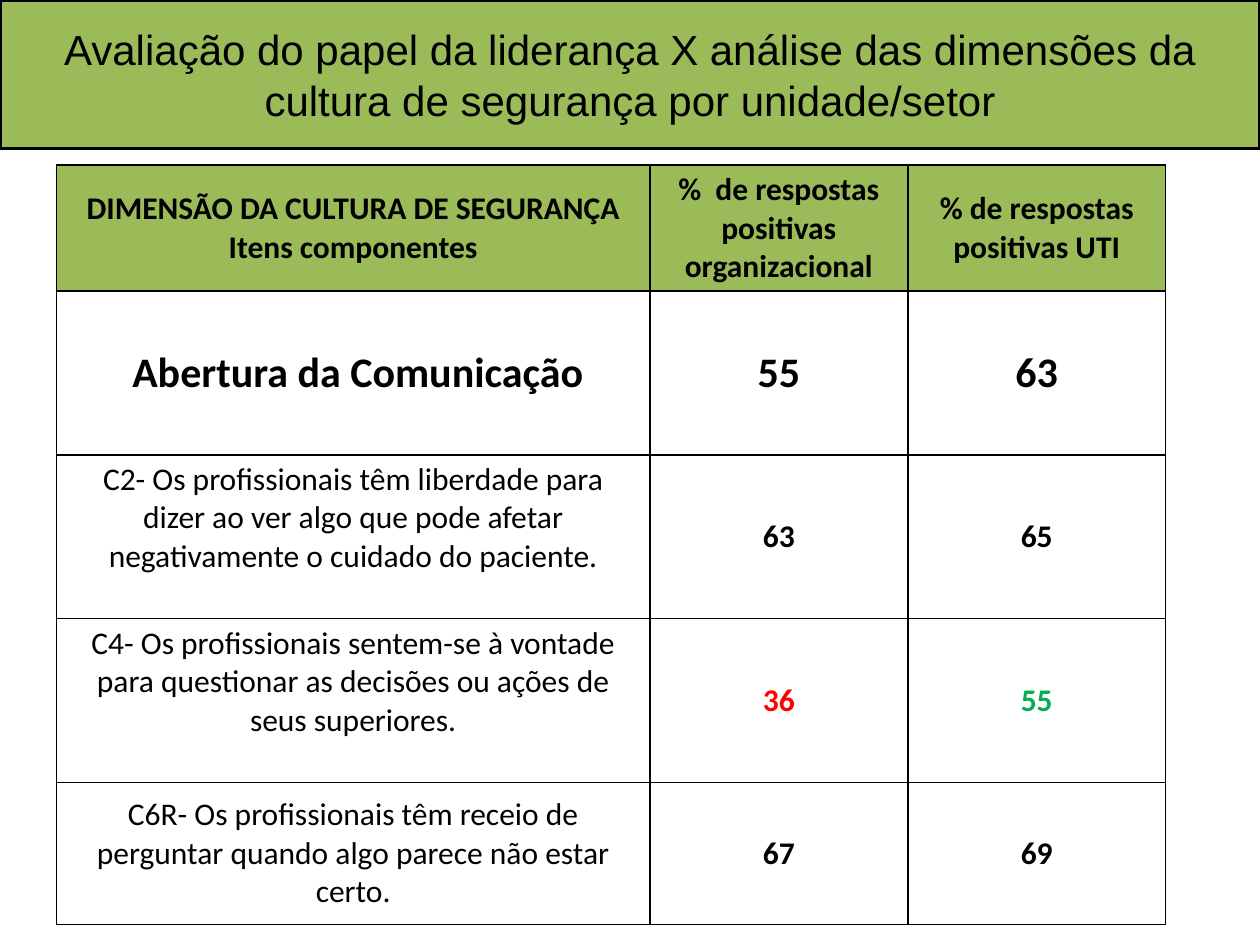
from dataclasses import dataclass

from lxml.etree import SubElement
from pptx import Presentation
from pptx.dml.color import RGBColor as Color
from pptx.enum.shapes import MSO_SHAPE as Shape
from pptx.enum.text import MSO_ANCHOR as Anchor, PP_ALIGN as Align
from pptx.oxml.ns import qn
from pptx.util import Cm, Pt

# Content
TITLE = ("Avaliação do papel da liderança X análise das dimensões da "
         "cultura de segurança por unidade/setor")
HEADERS = [
    ["DIMENSÃO DA CULTURA DE SEGURANÇA", "Itens componentes"],
    ["%  de respostas positivas organizacional"],
    ["% de respostas positivas UTI"],
]
DIMENSION = (" Abertura da Comunicação", 55, 63)
ITEMS = [
    ("C2- Os profissionais têm liberdade para dizer ao ver algo que pode "
     "afetar negativamente o cuidado do paciente.", 63, 65),
    ("C4- Os profissionais sentem-se à vontade para questionar as decisões "
     "ou ações de seus superiores.", 36, 55),
    ("C6R- Os profissionais têm receio de perguntar quando algo parece não "
     "estar certo.", 67, 69),
]


@dataclass(frozen=True)
class Theme:
    green: Color = Color(0x9B, 0xBB, 0x59)
    black: Color = Color(0, 0, 0)
    low: Color = Color(0xFF, 0, 0)
    improved: Color = Color(0, 0xB0, 0x50)
    title_font: str = "Arial"
    table_font: str = "Calibri"
    large: int = 24
    body: int = 18


THEME = Theme()
HIGHLIGHTS = {(3, 1): THEME.low, (3, 2): THEME.improved}

# Layout in centimetres
SLIDE_SIZE = (25.4, 19.05)
TITLE_HEIGHT = 3
TABLE_LEFT, TABLE_TOP = 1.14, 3.33
COLUMN_WIDTHS = [11.96, 5.2, 5.2]
ROW_HEIGHTS = [2.54, 3.3, 3.3, 3.3, 2.87]
SIDE_MARGIN, EDGE_MARGIN = 0.25, 0.1
RAISED_MARGIN = 0.85  # lifts the text of the two tall item rows
RAISED_CELLS = {(2, 0), (3, 0)}


def write(frame, lines, font, size, bold=False, color=THEME.black):
    frame.word_wrap = True
    for index, line in enumerate(lines):
        paragraph = frame.paragraphs[0] if index == 0 else frame.add_paragraph()
        paragraph.alignment = Align.CENTER
        run = paragraph.add_run()
        run.text = line
        run.font.name = font
        run.font.size = Pt(size)
        run.font.bold = bold
        run.font.color.rgb = color


def add_borders(cell):
    properties = cell._tc.get_or_add_tcPr()
    for index, side in enumerate(("lnL", "lnR", "lnT", "lnB")):
        line = SubElement(properties, qn(f"a:{side}"), w=str(Pt(1)))
        fill = SubElement(line, qn("a:solidFill"))
        SubElement(fill, qn("a:srgbClr"), val=str(THEME.black))
        properties.remove(line)
        properties.insert(index, line)  # borders come before the fill


def add_title(slide):
    banner = slide.shapes.add_shape(
        Shape.RECTANGLE, 0, 0, Cm(SLIDE_SIZE[0]), Cm(TITLE_HEIGHT))
    banner.shadow.inherit = False
    banner.fill.solid()
    banner.fill.fore_color.rgb = THEME.green
    banner.line.color.rgb = THEME.black
    banner.line.width = Pt(2)
    banner.text_frame.vertical_anchor = Anchor.MIDDLE
    write(banner.text_frame, [TITLE], THEME.title_font, THEME.large)


def add_results(slide):
    rows = [HEADERS] + [[[str(value)] for value in row]
                        for row in (DIMENSION, *ITEMS)]
    table = slide.shapes.add_table(
        len(rows), len(HEADERS), Cm(TABLE_LEFT), Cm(TABLE_TOP),
        Cm(sum(COLUMN_WIDTHS)), Cm(sum(ROW_HEIGHTS))).table
    for column, width in zip(table.columns, COLUMN_WIDTHS):
        column.width = Cm(width)
    for row, height in zip(table.rows, ROW_HEIGHTS):
        row.height = Cm(height)

    for r, row in enumerate(rows):
        for c, lines in enumerate(row):
            cell = table.cell(r, c)
            cell.vertical_anchor = Anchor.MIDDLE
            cell.margin_left = cell.margin_right = Cm(SIDE_MARGIN)
            cell.margin_top = Cm(EDGE_MARGIN)
            cell.margin_bottom = Cm(
                RAISED_MARGIN if (r, c) in RAISED_CELLS else EDGE_MARGIN)
            if r == 0:
                cell.fill.solid()
                cell.fill.fore_color.rgb = THEME.green
            else:
                cell.fill.background()
            add_borders(cell)
            write(cell.text_frame, lines, THEME.table_font,
                  THEME.large if r == 1 else THEME.body,
                  bold=r < 2 or c > 0,
                  color=HIGHLIGHTS.get((r, c), THEME.black))


def main():
    presentation = Presentation()
    presentation.slide_width, presentation.slide_height = map(Cm, SLIDE_SIZE)
    slide = presentation.slides.add_slide(presentation.slide_layouts[6])
    add_title(slide)
    add_results(slide)
    presentation.save("out.pptx")


if __name__ == "__main__":
    main()
